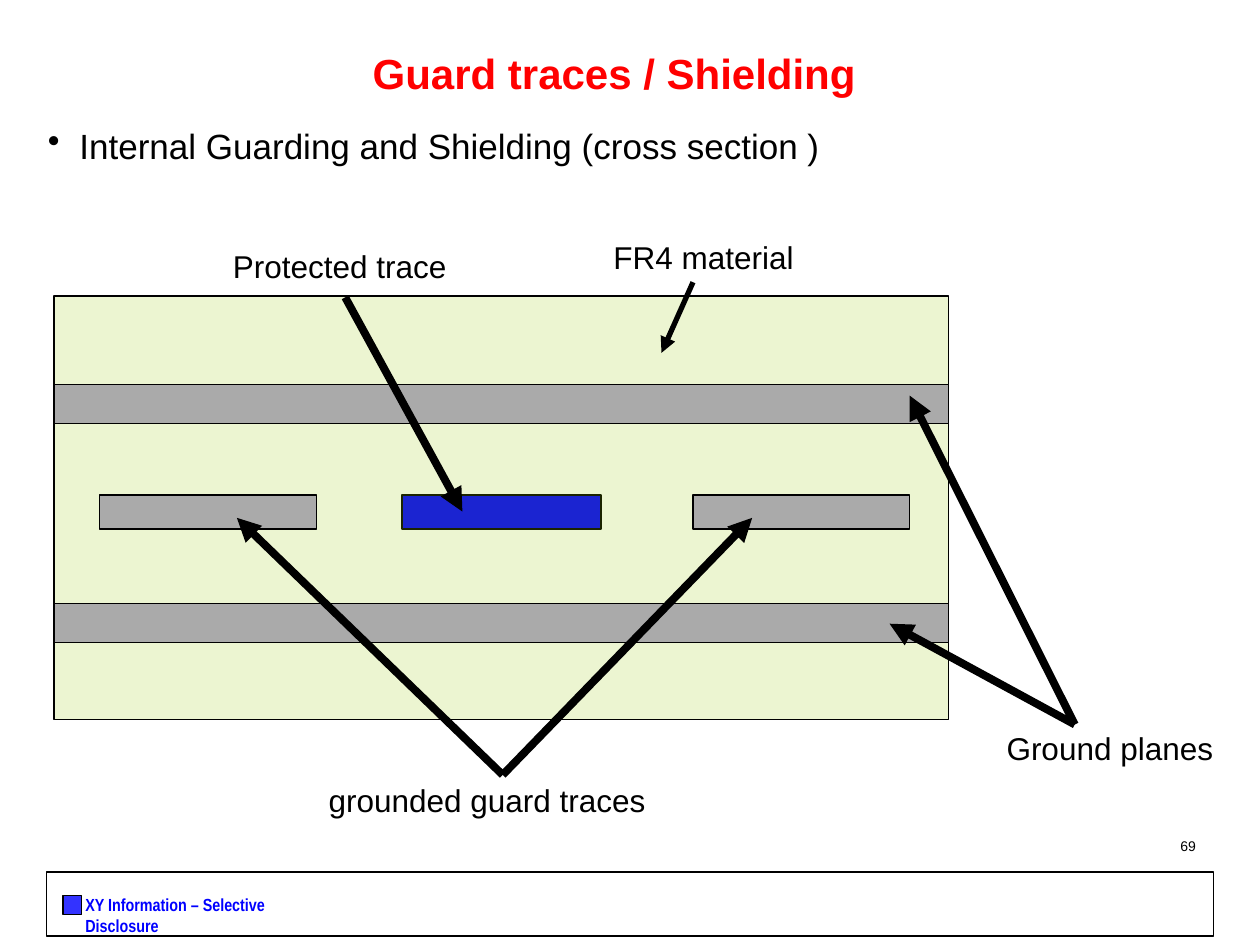
import pptx
import pptx.util
import pptx.dml.color
import pptx.enum.shapes
import pptx.enum.text
import pptx.oxml.ns
from lxml import etree

Inches = pptx.util.Inches
Pt = pptx.util.Pt
RGB = pptx.dml.color.RGBColor
ALIGN = pptx.enum.text.PP_ALIGN
qn = pptx.oxml.ns.qn

BLACK = RGB(0, 0, 0)
RED = RGB(0xFF, 0, 0)
BLUE = RGB(0, 0, 0xFF)
MARK = RGB(0x33, 0x33, 0xFF)
GREEN = RGB(0x99, 0xCC, 0)
GRAY = RGB(0xAA, 0xAA, 0xAA)


def add_box(slide, left, top, width, height, color=None, alpha=None):
    """Outlined rectangle; alpha is the opacity in percent."""
    box = slide.shapes.add_shape(
        pptx.enum.shapes.MSO_SHAPE.RECTANGLE,
        Inches(left), Inches(top), Inches(width), Inches(height))
    box.shadow.inherit = False
    box.line.color.rgb = BLACK
    box.line.width = Pt(0.75)
    if color is None:
        box.fill.background()
    else:
        box.fill.solid()
        box.fill.fore_color.rgb = color
    if alpha is not None:
        tint = box.fill._xPr.find(qn("a:solidFill"))[0]
        etree.SubElement(tint, qn("a:alpha"), val=str(alpha * 1000))


def style(para, size, color=BLACK, bold=False, name="Arial"):
    font = para.font
    font.name, font.size, font.bold = name, Pt(size), bold
    font.color.rgb = color


def add_text(slide, words, left, top, width, height, size):
    """Wrapped text box; returns its frame and paragraph."""
    frame = slide.shapes.add_textbox(
        Inches(left), Inches(top), Inches(width), Inches(height)).text_frame
    frame.word_wrap = True
    para = frame.paragraphs[0]
    para.text = words
    style(para, size)
    return frame, para


def add_arrow(slide, start, end, width=4.5):
    line = slide.shapes.add_connector(
        pptx.enum.shapes.MSO_CONNECTOR.STRAIGHT,
        *(Inches(value) for value in (*start, *end)))
    line.line.color.rgb = BLACK
    line.line.width = Pt(width)
    etree.SubElement(line.line._get_or_add_ln(), qn("a:tailEnd"), type="triangle")
    etree.SubElement(line._element.spPr, qn("a:effectLst"))


def add_title(slide, left, top, width, height):
    title = slide.shapes.title
    title.left, title.top = Inches(left), Inches(top)
    title.width, title.height = Inches(width), Inches(height)
    frame = title.text_frame
    frame.vertical_anchor = pptx.enum.text.MSO_ANCHOR.MIDDLE
    para = frame.paragraphs[0]
    para.text = "Guard traces / Shielding"
    para.alignment = ALIGN.CENTER
    para.line_spacing = 0.85
    style(para, 24, RED, True)


def add_bullet(slide, left, top, width, height):
    frame, para = add_text(
        slide, "Internal Guarding and Shielding (cross section )",
        left, top, width, height, 20)
    frame.margin_left = frame.margin_right = Inches(0.05)
    props = para._p.get_or_add_pPr()
    props.set("marL", str(Inches(0.25)))
    props.set("indent", str(-Inches(0.25)))
    bullet = etree.Element(qn("a:buChar"), char="•")
    props.find(qn("a:defRPr")).addprevious(bullet)
    para.line_spacing = 0.8


def add_board(slide, left, top, width, height):
    """Cross section: layers, planes and traces."""
    row = top + 1.58
    add_box(slide, left + 2.76, row, 1.58, 0.27, BLUE)
    add_box(slide, left, top, width, height, GREEN, 18)
    for drop in (0.7, 2.44):
        add_box(slide, left, top + drop, width, 0.31, GRAY)
    for shift in (0.36, 5.07):
        add_box(slide, left + shift, row, 1.72, 0.27, GRAY)


def add_notes(slide, left, top):
    """Labels and their arrows, measured from the board's corner."""
    # words, label offset and width, arrow start, arrow ends, arrow width
    notes = (
        ("grounded guard traces", (2.08, 3.8), 2.74,
         (3.56, 3.8), ((1.45, 1.76), (5.54, 1.76)), 4.5),
        ("Ground planes", (7.46, 3.39), 1.92,
         (8.1, 3.4), ((6.79, 0.79), (6.63, 2.6)), 4.5),
        ("FR4 material", (4.34, -0.51), 1.72,
         (5.07, -0.11), ((4.82, 0.45),), 3),
        ("Protected trace", (1.32, -0.44), 2.17,
         (2.31, 0.01), ((3.24, 1.71),), 4.5),
    )

    def place(point):
        return left + point[0], top + point[1]

    for words, spot, width, start, ends, weight in notes:
        add_text(slide, words, *place(spot), width, 0.4, 18)
        for end in ends:
            add_arrow(slide, place(start), place(end), weight)


def add_footer(slide, left, top, width, height):
    add_box(slide, left, top, width, height)
    _, para = add_text(slide, "XY Information – Selective Disclosure",
                       left + 0.21, top + 0.13, 1.8, 0.27, 10)
    style(para, 10, BLUE, True, "Arial Narrow")
    add_box(slide, left + 0.13, top + 0.19, 0.15, 0.15, MARK)


def add_number(slide, left, top, width, height):
    _, para = add_text(slide, "69", left, top, width, height, 8)
    para.alignment = ALIGN.RIGHT


def main():
    deck = pptx.Presentation()
    deck.slide_width, deck.slide_height = Inches(10), Inches(7.5)
    slide = deck.slides.add_slide(deck.slide_layouts[5])
    add_footer(slide, 0.37, 6.92, 9.26, 0.51)
    add_title(slide, 0.25, 0.16, 9.25, 0.89)
    add_bullet(slide, 0.33, 1, 9.29, 0.58)
    add_board(slide, 0.43, 2.35, 7.1, 3.36)
    add_notes(slide, 0.43, 2.35)
    add_number(slide, 7.26, 6.6, 2.33, 0.23)
    deck.save("out.pptx")


if __name__ == "__main__":
    main()
